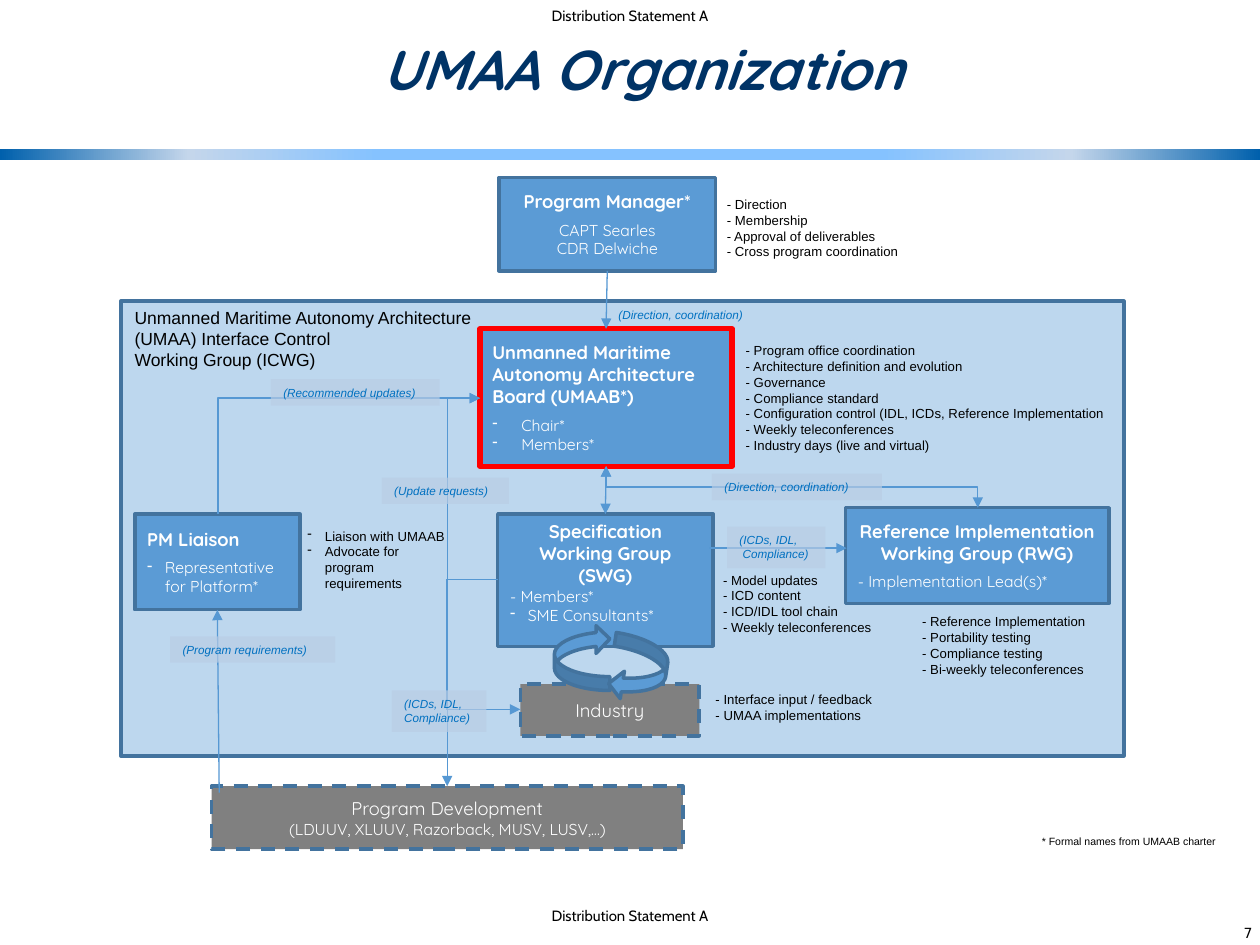
"""Builds the UMAA Organization slide on a grid of 1000 columns by 750 rows."""
from lxml import etree
from pptx import Presentation
from pptx import util as u
from pptx.dml.color import RGBColor
from pptx.enum import dml, shapes, text
from pptx.oxml.ns import qn

COLORS = {
    "panel": "BDD7EE", "box": "5B9BD5", "edge": "43739E", "grey": "808080",
    "alert": "FF0000", "link": "5698D3", "label": "B9CDE5", "label_text": "0070C0",
    "title": "003366", "black": "000000", "white": "FFFFFF",
    "bar_end": "0060AC", "bar_pale": "C4D6EB", "bar_mid": "85C2FF",
}
RGB = {name: RGBColor.from_string(value) for name, value in COLORS.items()}
LEFT, CENTER, RIGHT = text.PP_ALIGN.LEFT, text.PP_ALIGN.CENTER, text.PP_ALIGN.RIGHT
TOP, MIDDLE = text.MSO_ANCHOR.TOP, text.MSO_ANCHOR.MIDDLE
RECT, ARROW = shapes.MSO_SHAPE.RECTANGLE, shapes.MSO_SHAPE.CURVED_LEFT_ARROW
STRAIGHT, ELBOW = shapes.MSO_CONNECTOR.STRAIGHT, shapes.MSO_CONNECTOR.ELBOW

deck = Presentation()
deck.slide_width, deck.slide_height = u.Inches(10), u.Inches(7.5)
col, row = deck.slide_width // 1000, deck.slide_height // 750
slide = deck.slides.add_slide(deck.slide_layouts[6])
canvas = slide.shapes


def write(holder, lines, font, color, anchor=TOP, italic=False):
    frame = holder.text_frame
    frame.word_wrap = True
    frame.vertical_anchor = anchor
    for number, (words, size, bold, align, indent, before) in enumerate(lines):
        paragraph = frame.paragraphs[0] if number == 0 else frame.add_paragraph()
        paragraph.alignment = align
        if before:
            paragraph.space_before = u.Pt(before)
        if indent:
            props = paragraph._p.get_or_add_pPr()
            props.set("marL", str(indent * col))
            props.set("indent", str(-indent * col))
            etree.SubElement(props, qn("a:buChar")).set("char", "-")
        run = paragraph.add_run()
        run.text = words
        run.font.name, run.font.size = font, u.Pt(size)
        run.font.bold, run.font.italic = bold, italic
        run.font.color.rgb = RGB[color]


def link(start, finish, kind=STRAIGHT, turned=False, preset=None, adjust=None, both=False):
    (x0, y0), (x1, y1) = start, finish
    if turned:
        mid_x, mid_y, half_w, half_h = (x0 + x1) / 2, (y0 + y1) / 2, (y1 - y0) / 2, (x1 - x0) / 2
        x0, x1, y0, y1 = mid_x + half_w, mid_x - half_w, mid_y - half_h, mid_y + half_h
    line = canvas.add_connector(kind, int(x0 * col), int(y0 * row), int(x1 * col), int(y1 * row))
    line.line.color.rgb = RGB["link"]
    line.line.width = u.Pt(0.75)
    props = line._element.spPr
    if turned:
        props.find(qn("a:xfrm")).set("rot", str(270 * 60000))
    geometry = props.find(qn("a:prstGeom"))
    if preset:
        geometry.set("prst", preset)
    if adjust:
        guides = geometry.find(qn("a:avLst"))
        etree.SubElement(guides, qn("a:gd"), name="adj1", fmla=f"val {adjust}")
    for end in ("headEnd", "tailEnd") if both else ("tailEnd",):
        etree.SubElement(props.find(qn("a:ln")), qn(f"a:{end}")).set("type", "triangle")
    etree.SubElement(props, qn("a:effectLst"))
    return line


bar = canvas.add_shape(RECT, 0, 118 * row, 1000 * col, 9 * row)
bar.shadow.inherit = False
bar.line.fill.background()
bar.fill.gradient()
bar.fill.gradient_angle = 0
stops = bar._element.spPr.find(qn("a:gradFill")).find(qn("a:gsLst"))
for stop in list(stops):
    stops.remove(stop)
for share, tone in ((0, "bar_end"), (15, "bar_pale"), (30, "bar_mid"),
                    (70, "bar_mid"), (85, "bar_pale"), (100, "bar_end")):
    stop = etree.SubElement(stops, qn("a:gs"), pos=str(share * 1000))
    etree.SubElement(stop, qn("a:srgbClr"), val=COLORS[tone])

boxes = {
    "icwg": (96, 239, 796, 361, "panel", "edge", TOP, []),
    "swg": (395, 408, 171, 105, "box", "edge", TOP, [
        ("Specification", 10.5, True, CENTER, 0, 0),
        ("Working Group (SWG)", 10.5, True, CENTER, 0, 0),
        ("- Members*", 9, False, LEFT, 0, 0),
        ("SME Consultants*", 9, False, LEFT, 14, 0)]),
    "manager": (396, 141, 172, 74, "box", "edge", MIDDLE, [
        ("Program Manager*", 10.5, True, CENTER, 0, 0),
        ("CAPT Searles", 9, False, CENTER, 0, 4.5),
        ("CDR Delwiche", 9, False, CENTER, 0, 0)]),
    "rwg": (671, 403, 209, 76, "box", "edge", MIDDLE, [
        ("Reference Implementation Working Group (RWG)", 10.5, True, CENTER, 0, 0),
        ("- Implementation Lead(s)*", 9, False, LEFT, 0, 4.5)]),
    "development": (168, 624, 374, 50, "grey", "edge", MIDDLE, [
        ("Program Development", 10.5, False, CENTER, 0, 0),
        ("(LDUUV, XLUUV, Razorback, MUSV, LUSV,…)", 9, False, CENTER, 0, 0)]),
    "liaison": (107, 408, 131, 76, "box", "edge", MIDDLE, [
        ("PM Liaison", 10.5, True, LEFT, 0, 0),
        ("Representative for Platform*", 9, False, LEFT, 14, 4.5)]),
    "industry": (413, 543, 142, 41, "grey", "edge", MIDDLE, [
        ("Industry", 10.5, False, CENTER, 0, 0)]),
    "board": (381, 261, 200, 109, "box", "alert", MIDDLE, [
        ("Unmanned Maritime Autonomy Architecture Board (UMAAB*)", 10.5, True, LEFT, 0, 0),
        ("Chair*", 9, False, LEFT, 23, 4.5),
        ("Members*", 9, False, LEFT, 23, 0)]),
}
group = {}
for key, (x, y, w, h, fill, edge, anchor, lines) in boxes.items():
    group[key] = box = canvas.add_shape(RECT, x * col, y * row, w * col, h * row)
    box.shadow.inherit = False
    box.fill.solid()
    box.fill.fore_color.rgb = RGB[fill]
    box.line.color.rgb = RGB[edge]
    box.line.width = u.Pt(3 if edge == "alert" else 2)
    if fill == "grey":
        box.line.dash_style = dml.MSO_LINE.DASH
    if lines:
        write(box, lines, "Quicksand", "white", anchor)

for x, y, angle in ((440, 496, 180), (485, 505, 8.7)):
    cycle = canvas.add_shape(ARROW, x * col, y * row, 44 * col, 52 * row)
    cycle.shadow.inherit = False
    cycle.rotation = angle
    cycle.fill.solid()
    cycle.fill.fore_color.rgb = RGB["box"]
    cycle.line.color.rgb = RGB["edge"]
    cycle.line.width = u.Pt(2)

requirements = link((174, 629), (173, 484))
requirements.end_connect(group["liaison"], 2)
direction = link((481, 215), (481, 261))
direction.begin_connect(group["manager"], 2)
direction.end_connect(group["board"], 0)
oversight = link((481, 370), (480, 408), both=True)
oversight.begin_connect(group["board"], 2)
oversight.end_connect(group["swg"], 0)
link((563, 435), (672, 435))
link((481, 370), (776, 403), ELBOW, turned=True, both=True)
for start in ((173, 408), (355, 470)):
    link(start, (381, 316), ELBOW, turned=True, preset="bentConnector2")
link((395, 460), (355, 624), ELBOW, preset="bentConnector2")
link((395, 460), (413, 563), ELBOW, adjust=-227000)

labels = [
    (565, 376, 135, 21, ["(Direction, coordination)"]),
    (215, 301, 134, 21, ["(Recommended updates)"]),
    (135, 505, 131, 21, ["(Program requirements)"]),
    (311, 548, 75, 33, ["(ICDs, IDL, Compliance)"]),
    (303, 379, 101, 21, ["(Update requests)"]),
    (577, 418, 78, 33, ["(ICDs, IDL,", " Compliance)"]),
    (481, 239, 135, 21, ["(Direction, coordination)"]),
]
for x, y, w, h, lines in labels:
    label = canvas.add_shape(RECT, x * col, y * row, w * col, h * row)
    label.shadow.inherit = False
    label.line.fill.background()
    if y == 239:
        label.fill.background()
    else:
        label.fill.solid()
        label.fill.fore_color.rgb = RGB["label"]
        tint = label._element.spPr.find(qn("a:solidFill"))[0]
        etree.SubElement(tint, qn("a:alpha"), val="67000")
    write(label, [(words, 6.75, False, LEFT, 0, 0) for words in lines],
          "Arial", "label_text", italic=True)

notes = [
    (582, 267, 310, 111, 7.5, 0, [
        "- Program office coordination", "- Architecture definition and evolution",
        "- Governance", "- Compliance standard",
        "- Configuration control (IDL, ICDs, Reference Implementation",
        "- Weekly teleconferences", "- Industry days (live and virtual)"]),
    (564, 449, 140, 61, 7.5, 0, [
        "- Model updates", "- ICD content", "- ICD/IDL tool chain", "- Weekly teleconferences"]),
    (722, 482, 152, 61, 7.5, 0, [
        "- Reference Implementation", "- Portability testing",
        "- Compliance testing", "- Bi-weekly teleconferences"]),
    (234, 414, 129, 61, 7.5, 14, ["Liaison with UMAAB", "Advocate for program requirements"]),
    (97, 239, 299, 61, 10, 0, [
        "Unmanned Maritime Autonomy Architecture", "(UMAA) Interface Control",
        "Working Group (ICWG)"]),
    (817, 658, 175, 20, 6, 0, ["* Formal names from UMAAB charter"]),
    (567, 151, 218, 61, 7.5, 0, [
        "- Direction", "- Membership", "- Approval of deliverables",
        "- Cross program coordination"]),
    (558, 544, 162, 35, 7.5, 0, ["- Interface input / feedback", "- UMAA implementations"]),
]
for x, y, w, h, size, indent, lines in notes:
    note = canvas.add_textbox(x * col, y * row, w * col, h * row)
    write(note, [(words, size, False, LEFT, indent, 0) for words in lines], "Arial", "black")

for x, y, w, h, words, size, font, color, align, anchor in (
        (0, 0, 1000, 39, "Distribution Statement A", 8.5, "Cabin", "black", CENTER, TOP),
        (0, 715, 1000, 24, "Distribution Statement A", 8.5, "Cabin", "black", CENTER, TOP),
        (897, 729, 107, 22, "7", 8, "DejaVu Sans", "black", RIGHT, MIDDLE),
        (82, 35, 857, 61, "UMAA Organization", 32, "Quicksand", "title", CENTER, TOP)):
    heading = canvas.add_textbox(x * col, y * row, w * col, h * row)
    is_title = color == "title"
    write(heading, [(words, size, is_title, align, 0, 0)], font, color, anchor, is_title)
    if is_title:
        heading.text_frame.paragraphs[0].line_spacing = 0.75

deck.save("out.pptx")
